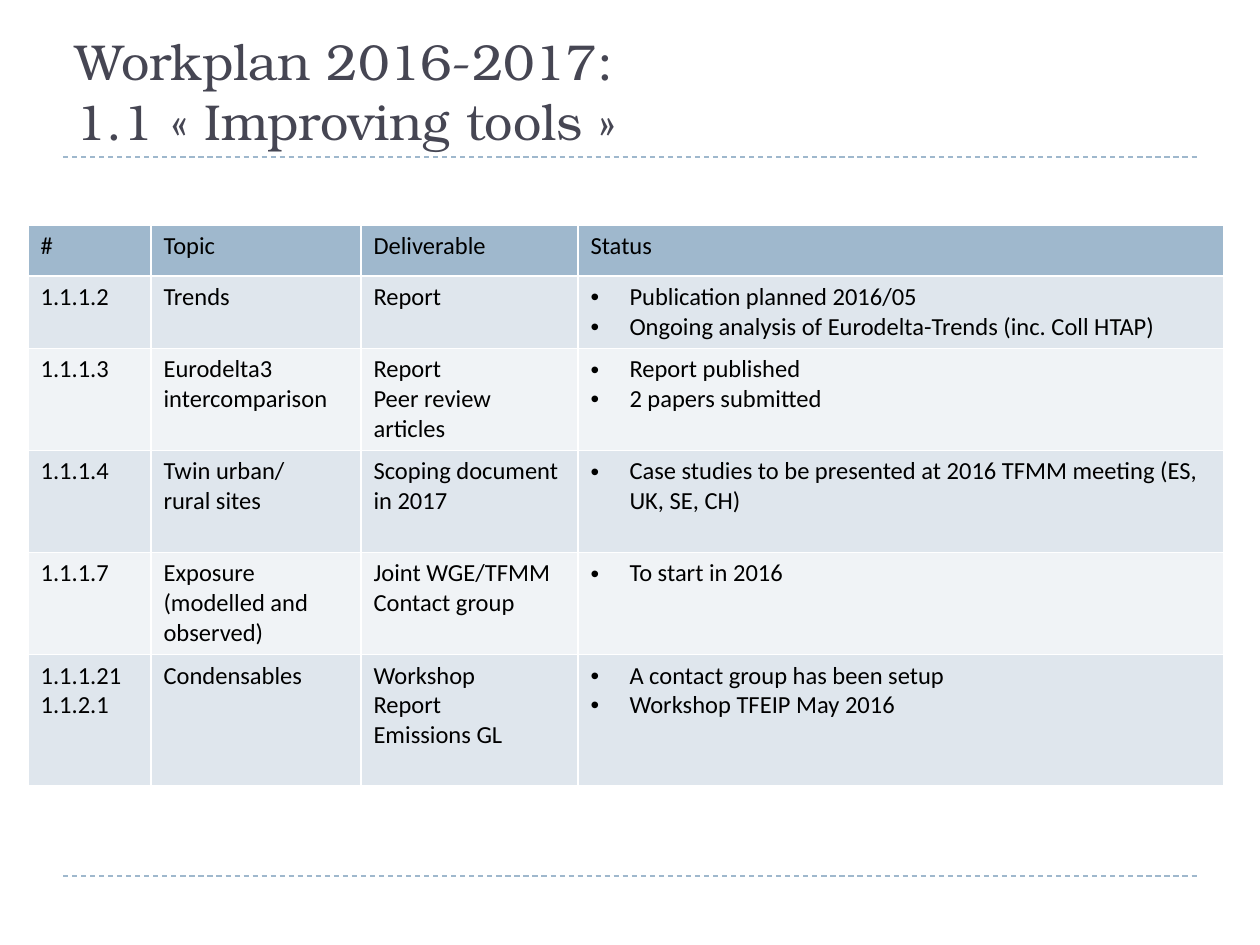
import pptx
import pptx.dml.color
import pptx.enum.dml
import pptx.enum.shapes
import pptx.enum.text
import pptx.oxml.ns
import pptx.util
from lxml import etree

RGB = pptx.dml.color.RGBColor
WHITE = RGB(0xFF, 0xFF, 0xFF)
BLACK = RGB(0, 0, 0)
SLATE = RGB(0x46, 0x46, 0x53)
BLUE = RGB(0x9F, 0xB8, 0xCD)
BAND_DARK = RGB(0xDF, 0xE6, 0xED)
BAND_LIGHT = RGB(0xF0, 0xF3, 0xF6)

PX_PER_INCH = 126
BULLET_INDENT = 39
COLUMN_WIDTHS = [123, 210, 217, 646]
ROW_HEIGHTS = [51, 72, 102, 102, 102, 131]
STATUS_COLUMN = 3
WORKPLAN = [
    ["#", "Topic", "Deliverable", "Status"],
    ["1.1.1.2", "Trends", "Report",
     "Publication planned 2016/05\nOngoing analysis of Eurodelta-Trends (inc. Coll HTAP)"],
    ["1.1.1.3", "Eurodelta3 intercomparison", "Report\nPeer review articles",
     "Report published\n2 papers submitted"],
    ["1.1.1.4", "Twin urban/\nrural sites", "Scoping document in 2017",
     "Case studies to be presented at 2016 TFMM meeting (ES, UK, SE, CH)"],
    ["1.1.1.7", "Exposure (modelled and observed)", "Joint WGE/TFMM Contact group",
     "To start in 2016"],
    ["1.1.1.21\n1.1.2.1", "Condensables", "Workshop\nReport\nEmissions GL",
     "A contact group has been setup\nWorkshop TFEIP May 2016"],
]


def px(length):
    return pptx.util.Emu(round(length * 914400 / PX_PER_INCH))


def add_element(parent, tag, **attributes):
    return etree.SubElement(parent, pptx.oxml.ns.qn(tag), attributes)


def write_text(frame, text, *, size, font, color, bullets=False):
    frame.text = text
    for paragraph in frame.paragraphs:
        paragraph.alignment = pptx.enum.text.PP_ALIGN.LEFT
        for run in paragraph.runs:
            run.font.size = pptx.util.Pt(size)
            run.font.name = font
            run.font.bold = False
            run.font.color.rgb = color
        if bullets:
            properties = paragraph._p.get_or_add_pPr()
            properties.set("marL", str(px(BULLET_INDENT)))
            properties.set("indent", str(-px(BULLET_INDENT)))
            add_element(properties, "a:buFont", typeface="Arial")
            add_element(properties, "a:buChar", char="•")


def add_title(slide, text):
    title = slide.shapes.title
    title.left, title.top, title.width, title.height = map(px, (63, 21, 1162, 136))
    write_text(title.text_frame, text, size=28.8, font="TeX Gyre Bonum", color=SLATE)
    title.text_frame.word_wrap = True
    title.text_frame.auto_size = pptx.enum.text.MSO_AUTO_SIZE.NONE
    title.text_frame.vertical_anchor = pptx.enum.text.MSO_ANCHOR.BOTTOM


def add_rule(slide, y):
    rule = slide.shapes.add_connector(
        pptx.enum.shapes.MSO_CONNECTOR.STRAIGHT, px(63), px(y), px(1197), px(y))
    rule.line.color.rgb = BLUE
    rule.line.width = pptx.util.Pt(0.75)
    rule.line.dash_style = pptx.enum.dml.MSO_LINE.DASH
    add_element(rule._element.spPr, "a:effectLst")


def format_cell(cell, fill):
    properties = cell._tc.get_or_add_tcPr()
    for side in ("a:lnL", "a:lnR", "a:lnT", "a:lnB"):
        border = add_element(properties, side, w=str(pptx.util.Pt(1)))
        add_element(add_element(border, "a:solidFill"), "a:srgbClr", val=str(WHITE))
    cell.fill.solid()
    cell.fill.fore_color.rgb = fill


def add_workplan(slide):
    table = slide.shapes.add_table(
        len(WORKPLAN), len(COLUMN_WIDTHS), px(28), px(225),
        px(sum(COLUMN_WIDTHS)), px(sum(ROW_HEIGHTS))).table
    for column, width in zip(table.columns, COLUMN_WIDTHS):
        column.width = px(width)
    for row, height in zip(table.rows, ROW_HEIGHTS):
        row.height = px(height)
    for r, entries in enumerate(WORKPLAN):
        fill = BLUE if r == 0 else BAND_DARK if r % 2 else BAND_LIGHT
        for c, entry in enumerate(entries):
            cell = table.cell(r, c)
            format_cell(cell, fill)
            write_text(cell.text_frame, entry, size=14, font="Calibri", color=BLACK,
                       bullets=r > 0 and c == STATUS_COLUMN)


def main():
    presentation = pptx.Presentation()
    presentation.slide_width = px(1260)
    presentation.slide_height = px(945)
    slide = presentation.slides.add_slide(presentation.slide_layouts.get_by_name("Title Only"))
    slide.background.fill.solid()
    slide.background.fill.fore_color.rgb = WHITE
    for y in (876, 157):
        add_rule(slide, y)
    add_title(slide, "Workplan 2016-2017: \v1.1 « Improving tools »")
    add_workplan(slide)
    presentation.save("out.pptx")


if __name__ == "__main__":
    main()
